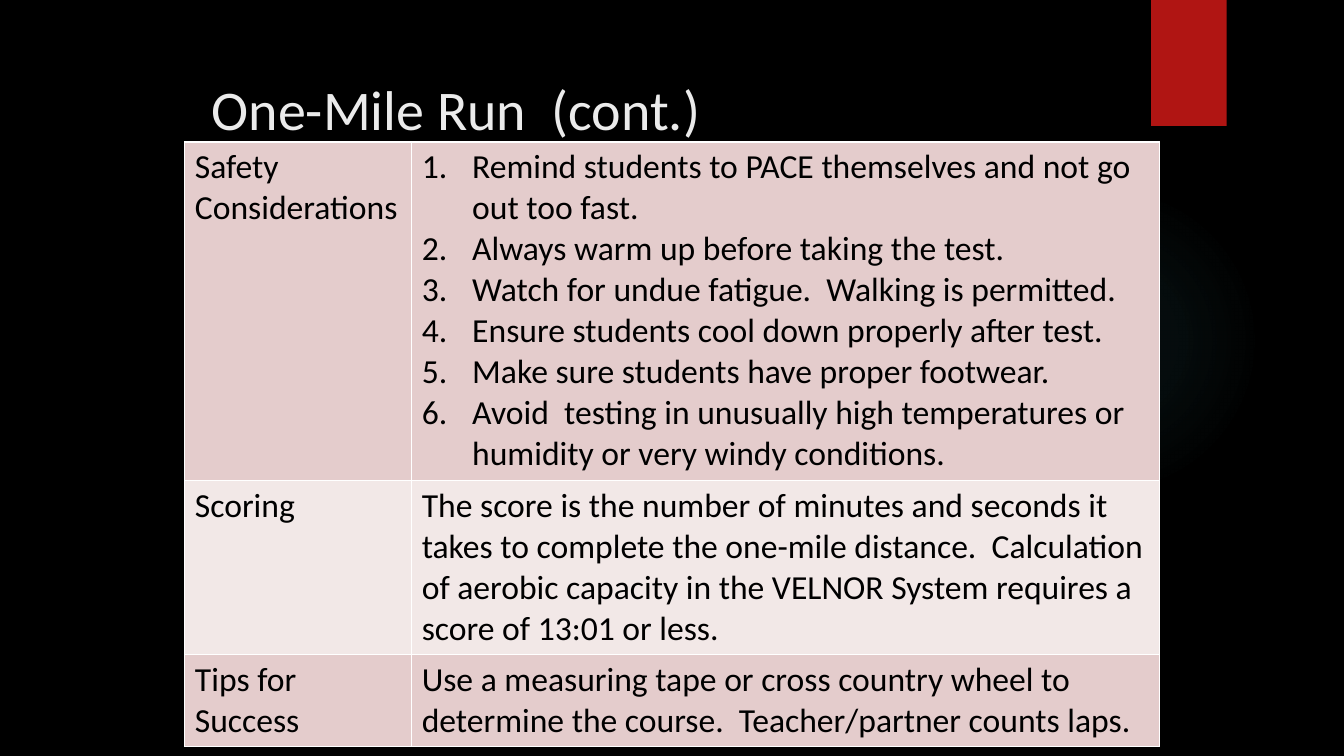
from lxml.etree import SubElement as sub
from pptx import Presentation
from pptx.dml.color import RGBColor as RGB
from pptx.enum.shapes import MSO_SHAPE as SHAPE
from pptx.enum.text import MSO_ANCHOR as ANCHOR, MSO_AUTO_SIZE as SIZE, PP_ALIGN as ALIGN
from pptx.oxml.ns import qn
from pptx.util import Inches, Pt

COLORS = {"back": "000000", "title": "EBEBEB", "text": "000000", "red": "B01513",
          "glow": "50B9C1", "dark": "E4CCCC", "light": "F2E8E7", "line": "FFFFFF"}
GLOW = [(0, 7), (36, 6), (69, 0)]  # stop and opacity, in percent
ROWS = [
    (40.3, "Safety Considerations", [
        "Remind students to PACE themselves and not go out too fast.",
        "Always warm up before taking the test.",
        "Watch for undue fatigue.  Walking is permitted.",
        "Ensure students cool down properly after test.",
        "Make sure students have proper footwear.",
        "Avoid  testing in unusually high temperatures or humidity or very windy conditions."]),
    (20.4, "Scoring", [
        "The score is the number of minutes and seconds it takes to complete the one-mile "
        "distance.  Calculation of aerobic capacity in the VELNOR System requires a score "
        "of 13:01 or less."]),
    (10.8, "Tips for Success", [
        "Use a measuring tape or cross country wheel to determine the course.  "
        "Teacher/partner counts laps."]),
]


class Deck:
    """Style and current slide, on a grid of 160 columns by 90 rows."""
    font = "Calibri"

    def __init__(self):
        self.prs = Presentation()
        self.prs.slide_width, self.prs.slide_height = Inches(13.33), Inches(7.5)
        self.slide = self.prs.slides.add_slide(self.prs.slide_layouts[5])
        self.paint(self.slide.background.fill, "back")

    def cell(self, n):
        return round(self.prs.slide_height * n / 90)

    def box(self, *grid):
        return [self.cell(n) for n in grid]

    def paint(self, fill, name):
        fill.solid()
        fill.fore_color.rgb = RGB.from_string(COLORS[name])

    def style(self, par, size, name):
        par.font.name, par.font.size = self.font, Pt(size)
        par.font.color.rgb = RGB.from_string(COLORS[name])

    def shape(self, kind, name, *grid):
        shape = self.slide.shapes.add_shape(kind, *self.box(*grid))
        shape.shadow.inherit = False
        shape.line.fill.background()
        self.paint(shape.fill, name)
        return shape

    def glow(self, *grid):
        shape = self.shape(SHAPE.OVAL, "glow", *grid)
        shape.fill.gradient()
        grad = shape._element.spPr.find(qn("a:gradFill"))
        for old in list(grad):
            grad.remove(old)
        stops = sub(grad, qn("a:gsLst"))
        for pos, alpha in GLOW:
            stop = sub(stops, qn("a:gs"), pos=str(pos * 1000))
            color = sub(stop, qn("a:srgbClr"), val=COLORS["glow"])
            sub(color, qn("a:alpha"), val=str(alpha * 1000))
        way = sub(grad, qn("a:path"), path="circle")
        sub(way, qn("a:fillToRect"), {side: "50000" for side in "ltrb"})

    def title(self, text, *grid):
        shape = self.slide.shapes.title
        shape.left, shape.top, shape.width, shape.height = self.box(*grid)
        frame = shape.text_frame
        frame.text = text
        frame.auto_size, frame.vertical_anchor = SIZE.NONE, ANCHOR.MIDDLE
        par = frame.paragraphs[0]
        par.alignment = ALIGN.LEFT
        self.style(par, 40, "title")

    def number(self, par):
        props = par._p.get_or_add_pPr()
        props.set("marL", str(Inches(0.5)))
        props.set("indent", str(-Inches(0.5)))
        sub(props, qn("a:buFont"), typeface="+mj-lt")
        sub(props, qn("a:buAutoNum"), type="arabicPeriod")

    def border(self, cell):
        props = cell._tc.get_or_add_tcPr()
        for at, side in enumerate(("lnL", "lnR", "lnT", "lnB")):
            line = props.makeelement(qn("a:" + side), {"w": str(Pt(1))})
            fill = sub(line, qn("a:solidFill"))
            sub(fill, qn("a:srgbClr"), val=COLORS["line"])
            props.insert(at, line)

    def fill_cell(self, cell, lines, name):
        self.paint(cell.fill, name)
        self.border(cell)
        cell.text = "\n".join(lines)
        for par in cell.text_frame.paragraphs:
            if len(lines) > 1:
                self.number(par)
            self.style(par, 24, "text")

    def table(self, rows, cols, left, top):
        high = sum(row[0] for row in rows)
        grid = self.box(left, top, sum(cols), high)
        table = self.slide.shapes.add_table(len(rows), len(cols), *grid).table
        table.first_row = table.horz_banding = False
        for col, wide in zip(table.columns, cols):
            col.width = self.cell(wide)
        for i, (high, head, lines) in enumerate(rows):
            table.rows[i].height = self.cell(high)
            name = "light" if i % 2 else "dark"
            self.fill_cell(table.cell(i, 0), [head], name)
            self.fill_cell(table.cell(i, 1), lines, name)


def main():
    deck = Deck()
    # Backdrop
    deck.glow(113, 22, 37, 37)
    deck.shape(SHAPE.RECTANGLE, "red", 137, 0, 9, 15)
    # Content
    deck.title("One-Mile Run  (cont.)", 24, 8, 87, 9.84)
    deck.table(ROWS, (27, 89), 22, 16.9)
    deck.prs.save("out.pptx")


if __name__ == "__main__":
    main()
